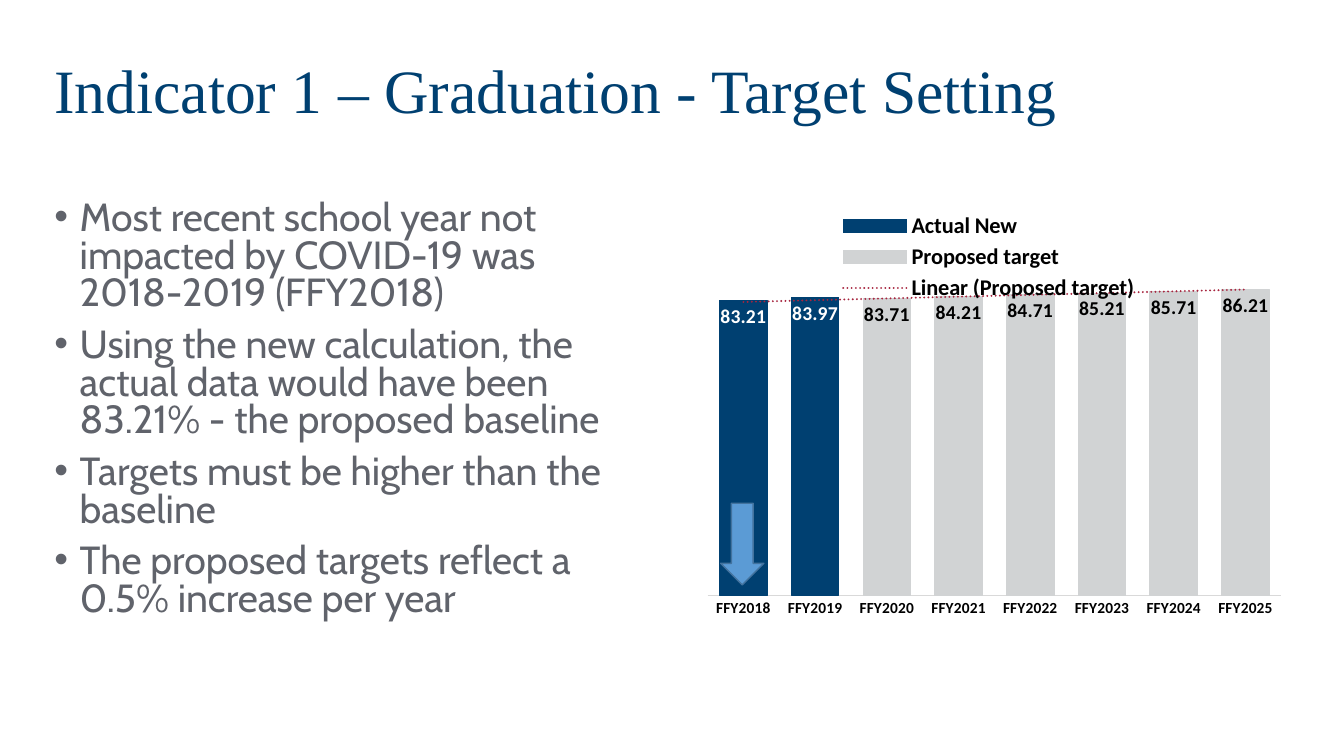
import lxml.etree
import pptx
import pptx.chart.data
import pptx.dml.color
import pptx.enum.chart
import pptx.enum.dml
import pptx.enum.shapes
import pptx.enum.text
import pptx.oxml
import pptx.oxml.ns
import pptx.util
from pptx.util import Cm

NAVY, GREY, SLATE, BLACK = "004071", "D1D3D4", "60636B", "000000"
BULLETS = [
    "Most recent school year not impacted by COVID-19 was 2018-2019 (FFY2018)",
    "Using the new calculation, the actual data would have been 83.21% - the proposed baseline",
    "Targets must be higher than the baseline",
    "The proposed targets reflect a 0.5% increase per year",
]
YEARS = [f"FFY{year}" for year in range(2018, 2026)]
ACTUAL = [83.21, 83.97] + [None] * 6
TARGETS = [None] * 2 + [83.71, 84.21, 84.71, 85.21, 85.71, 86.21]


def rgb(value):
    return pptx.dml.color.RGBColor.from_string(value)


def set_all(target, values):
    for name, value in values.items():
        setattr(target, name, value)


def set_font(font, name, size, color, bold=False):
    set_all(font, {"name": name, "size": pptx.util.Pt(size), "bold": bold})
    font.color.rgb = rgb(color)


def paint(format_holder, fill, line, width):
    format_holder.fill.solid()
    format_holder.fill.fore_color.rgb = rgb(fill)
    format_holder.line.color.rgb = rgb(line)
    format_holder.line.width = pptx.util.Pt(width)


def add_title(slide, box):
    frame = slide.shapes.add_textbox(*box).text_frame
    set_all(frame, {"word_wrap": True, "vertical_anchor": pptx.enum.text.MSO_ANCHOR.MIDDLE})
    paragraph = frame.paragraphs[0]
    paragraph.text = "Indicator 1 – Graduation - Target Setting"
    paragraph.line_spacing = 0.9
    set_font(paragraph.font, "Times New Roman", 44, NAVY)


def add_bullets(slide, box):
    frame = slide.shapes.add_textbox(*box).text_frame
    frame.word_wrap = True
    for index, text in enumerate(BULLETS):
        paragraph = frame.add_paragraph() if index else frame.paragraphs[0]
        paragraph.text = text
        paragraph.line_spacing = 0.8
        if index:
            paragraph.space_before = pptx.util.Pt(10)
        properties = paragraph._p.get_or_add_pPr()
        properties.set("marL", str(Cm(0.64)))
        properties.set("indent", str(Cm(-0.64)))
        for tag, name, value in (("a:buFont", "typeface", "Arial"), ("a:buChar", "char", "•")):
            bullet = lxml.etree.SubElement(properties, pptx.oxml.ns.qn(tag))
            bullet.set(name, value)
        set_font(paragraph.font, "Cabin", 28, SLATE)


def set_layout(element, x, y, width, height, inner=False):
    """Place a chart part by fractions of the chart's size."""
    for old in element.findall(pptx.oxml.ns.qn("c:layout")):
        element.remove(old)
    target = '<c:layoutTarget val="inner"/>' if inner else ""
    layout = pptx.oxml.parse_xml(
        f'<c:layout {pptx.oxml.ns.nsdecls("c")}><c:manualLayout>{target}'
        '<c:xMode val="edge"/><c:yMode val="edge"/>'
        f'<c:x val="{x}"/><c:y val="{y}"/><c:w val="{width}"/><c:h val="{height}"/>'
        "</c:manualLayout></c:layout>")
    element.insert(0 if inner else 1, layout)


def add_trend_line(series):
    trend = pptx.oxml.parse_xml(
        f'<c:trendline {pptx.oxml.ns.nsdecls("c", "a")}><c:spPr><a:ln w="19050" cap="rnd">'
        '<a:solidFill><a:srgbClr val="A7253F"/></a:solidFill><a:prstDash val="sysDot"/>'
        '</a:ln></c:spPr><c:trendlineType val="linear"/>'
        '<c:dispRSqr val="0"/><c:dispEq val="0"/></c:trendline>')
    series._element.find(pptx.oxml.ns.qn("c:cat")).addprevious(trend)


def add_target_chart(slide, box):
    data = pptx.chart.data.CategoryChartData(number_format="0.00")
    data.categories = YEARS
    data.add_series("Actual New", ACTUAL)
    data.add_series("Proposed target", TARGETS)
    kind = pptx.enum.chart.XL_CHART_TYPE.COLUMN_CLUSTERED
    chart = slide.shapes.add_chart(kind, *box, data).chart
    set_all(chart, {"has_title": False, "has_legend": True})
    set_font(chart.font, "Calibri", 10, BLACK)
    set_layout(chart._chartSpace.chart.plotArea, 0.025, 0.103, 0.949, 0.811, inner=True)

    set_all(chart.legend, {"position": pptx.enum.chart.XL_LEGEND_POSITION.TOP,
                           "include_in_layout": False})
    set_font(chart.legend.font, "Calibri", 16, BLACK, bold=True)
    set_layout(chart.legend._element, 0.24, 0.03, 0.5, 0.22)

    set_all(chart.value_axis, {"visible": False, "has_major_gridlines": False,
                               "minimum_scale": 0, "maximum_scale": 100})
    axis = chart.category_axis
    axis.major_tick_mark = pptx.enum.chart.XL_TICK_MARK.NONE
    set_font(axis.tick_labels.font, "Calibri", 11, BLACK, bold=True)
    axis.format.line.color.rgb = rgb("D9D9D9")
    axis.format.line.width = pptx.util.Pt(0.75)

    plot = chart.plots[0]
    set_all(plot, {"gap_width": 51, "overlap": 100, "vary_by_categories": False})
    for series, color, label_color in zip(plot.series, (NAVY, GREY), ("FFFFFF", BLACK)):
        paint(series.format, color, color, 0.75)
        labels = series.data_labels
        set_all(labels, {"show_value": True,
                         "position": pptx.enum.chart.XL_LABEL_POSITION.INSIDE_END})
        set_font(labels.font, "Calibri", 14, label_color, bold=True)
    add_trend_line(plot.series[1])


def add_baseline_arrow(slide, chart_box):
    left, top, width, height = chart_box
    arrow = slide.shapes.add_shape(pptx.enum.shapes.MSO_SHAPE.UP_ARROW,
                                   left + Cm(0.71), top + Cm(7.75), Cm(1.09), Cm(2.06))
    arrow.rotation = 180
    arrow.shadow.inherit = False
    paint(arrow, "5B9BD5", "43739E", 1)


def main():
    presentation = pptx.Presentation()
    set_all(presentation, {"slide_width": Cm(33.87), "slide_height": Cm(19.05)})
    slide = presentation.slides.add_slide(presentation.slide_layouts[6])
    chart_box = (Cm(17.45), Cm(4.93), Cm(15.24), Cm(11.02))
    add_title(slide, (Cm(1.12), Cm(0.41), Cm(31.57), Cm(3.89)))
    add_bullets(slide, (Cm(1.12), Cm(4.95), Cm(15.24), Cm(11.02)))
    add_target_chart(slide, chart_box)
    add_baseline_arrow(slide, chart_box)
    presentation.save("out.pptx")


if __name__ == "__main__":
    main()
